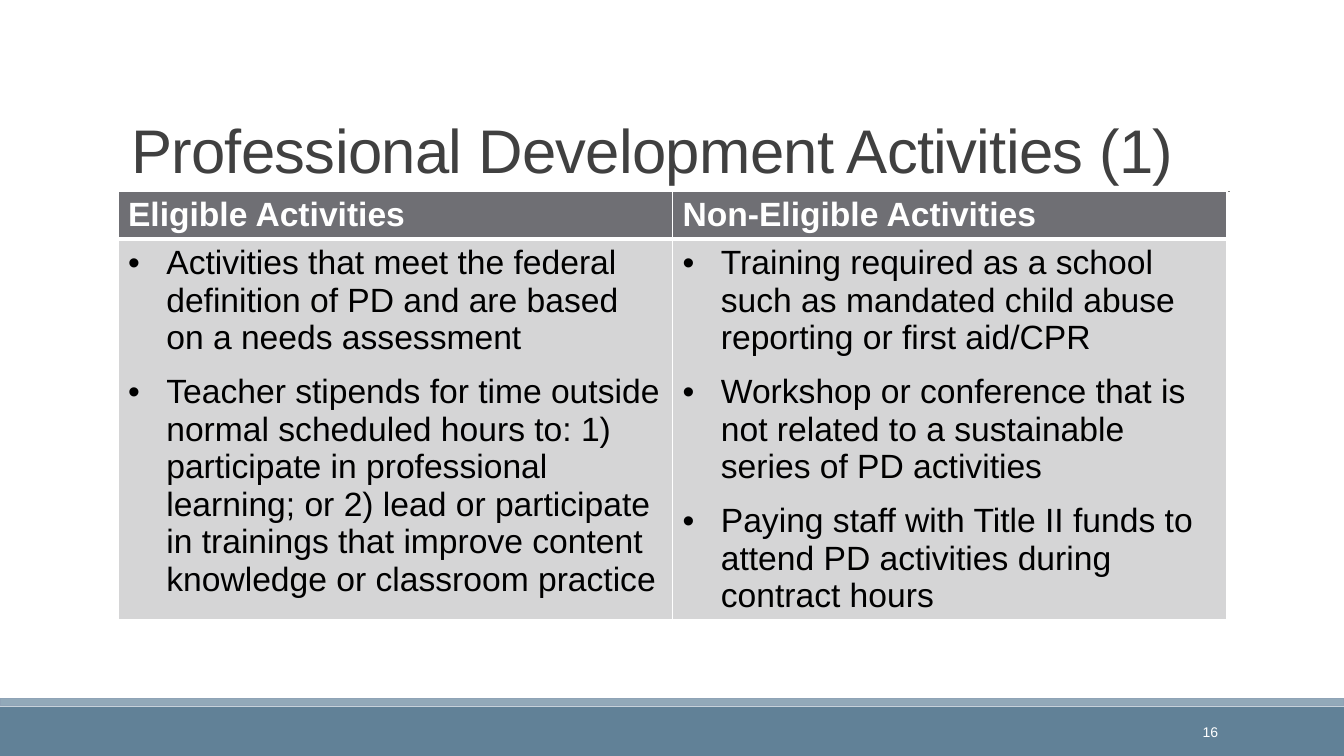
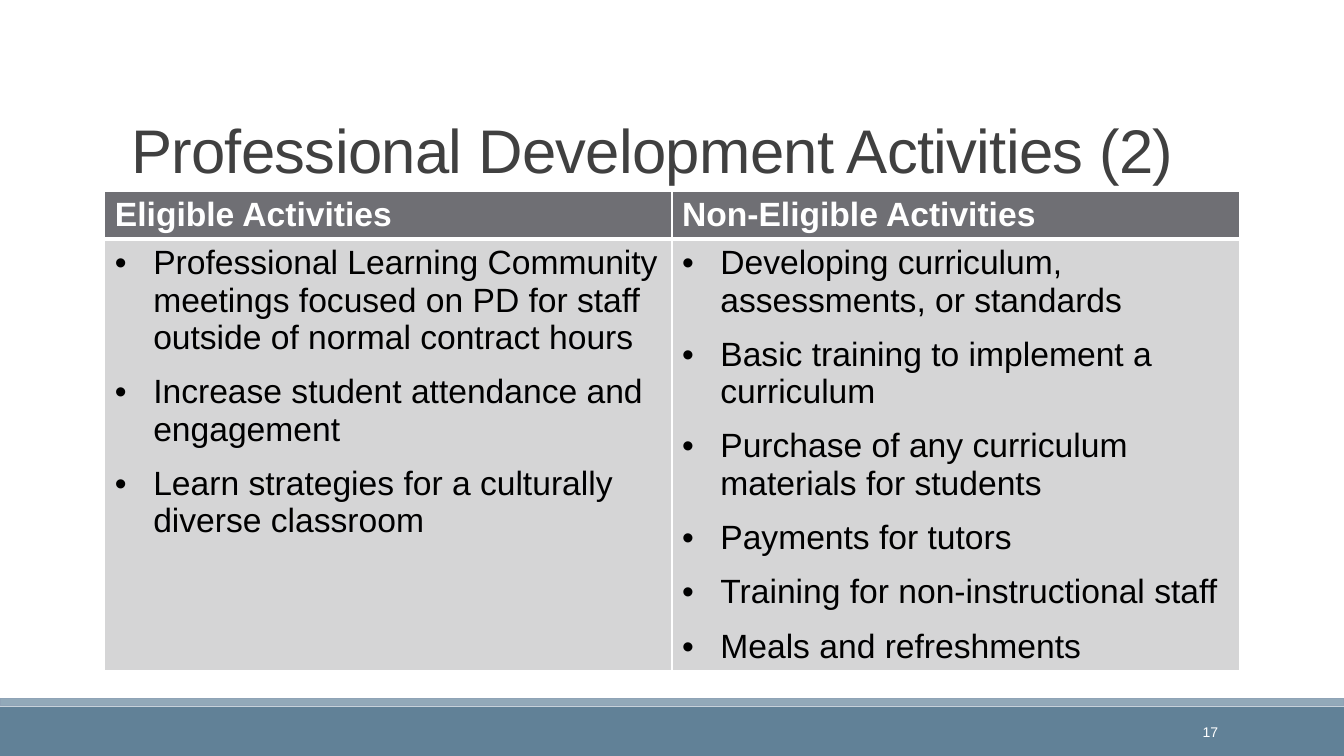
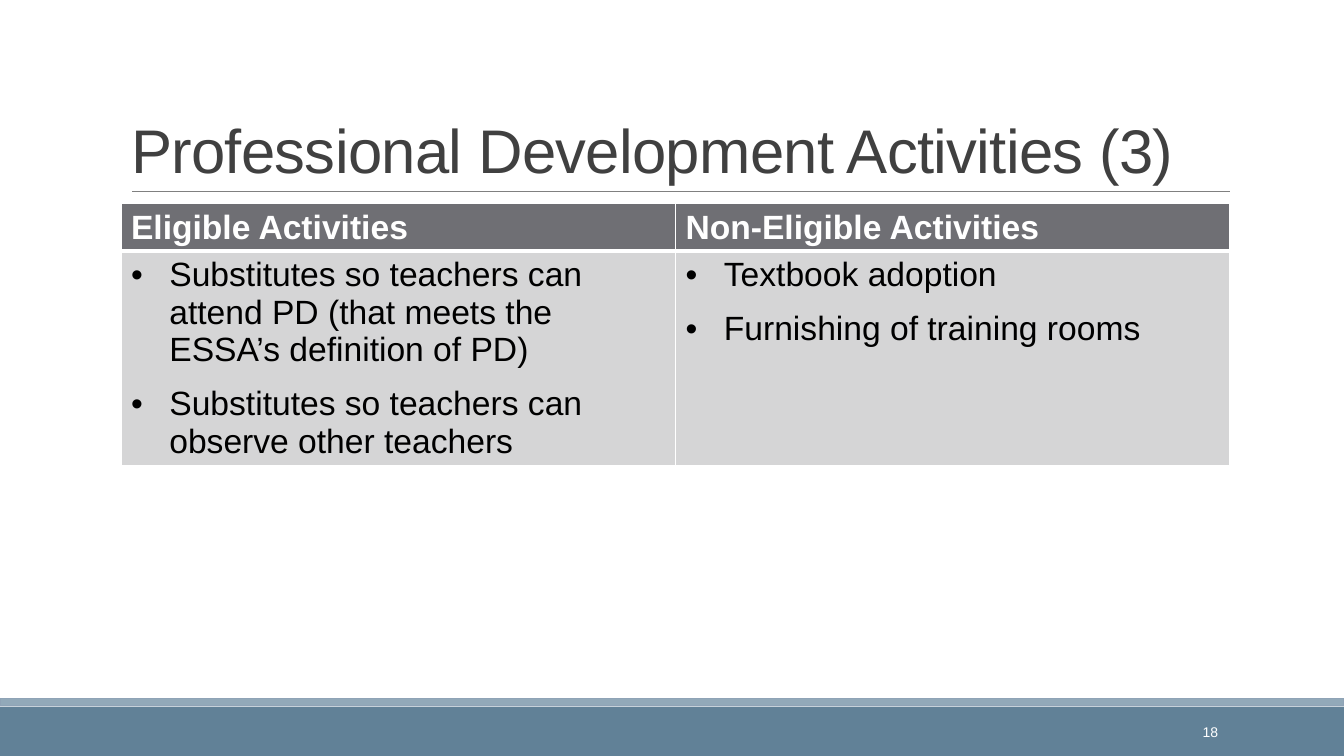
from lxml import etree
from pptx import Presentation
from pptx.dml.color import RGBColor
from pptx.enum.shapes import MSO_CONNECTOR, MSO_SHAPE
from pptx.enum.text import MSO_ANCHOR, MSO_AUTO_SIZE, PP_ALIGN
from pptx.oxml.ns import qn
from pptx.util import Inches, Pt

STRAIGHT = MSO_CONNECTOR.STRAIGHT
RECTANGLE = MSO_SHAPE.RECTANGLE
BOTTOM, MIDDLE = MSO_ANCHOR.BOTTOM, MSO_ANCHOR.MIDDLE
NO_AUTOFIT = MSO_AUTO_SIZE.NONE
LEFT, RIGHT = PP_ALIGN.LEFT, PP_ALIGN.RIGHT

WHITE = RGBColor(0xFF, 0xFF, 0xFF)
BLACK = RGBColor(0x00, 0x00, 0x00)
TITLE_GRAY = RGBColor(0x40, 0x40, 0x40)
RULE_GRAY = RGBColor(0x80, 0x80, 0x80)
HEADER_GRAY = RGBColor(0x6F, 0x6F, 0x74)
BODY_GRAY = RGBColor(0xD5, 0xD5, 0xD6)
BAND_BLUE = RGBColor(0x61, 0x81, 0x97)
STRIPE_BLUE = RGBColor(0x92, 0xA9, 0xB9)
STRIPE_EDGE = RGBColor(0x8F, 0xA3, 0xB6)

FONT = "Arial"
FIRST_NUMBER = 16
HEADINGS = ["Eligible Activities", "Non-Eligible Activities"]
ROW_HEIGHT = 0.41

# Each page: table left, top, width, height, then the bullets of both columns
PAGES = [
    (1.17, 1.9, 11, 4.53, [
        ["Activities that meet the federal definition of PD and are based on a needs assessment",
         "Teacher stipends for time outside normal scheduled hours to: 1) participate in "
         "professional learning; or 2) lead or participate in trainings that improve content "
         "knowledge or classroom practice"],
        ["Training required as a school such as mandated child abuse reporting or first aid/CPR",
         "Workshop or conference that is not related to a sustainable series of PD activities",
         "Paying staff with Title II funds to attend PD activities during contract hours"],
    ]),
    (1.04, 1.9, 11.25, 5.03, [
        ["Professional Learning Community meetings focused on PD for staff outside of normal "
         "contract hours",
         "Increase student attendance and engagement",
         "Learn strategies for a culturally diverse classroom"],
        ["Developing curriculum, assessments, or standards",
         "Basic training to implement a curriculum",
         "Purchase of any curriculum materials for students",
         "Payments for tutors",
         "Training for non-instructional staff",
         "Meals and refreshments"],
    ]),
    (1.2, 2.02, 11, 2.77, [
        ["Substitutes so teachers can attend PD (that meets the ESSA’s definition of PD)",
         "Substitutes so teachers can observe other teachers"],
        ["Textbook adoption",
         "Furnishing of training rooms"],
    ]),
]


def write(frame, lines, size=24, color=BLACK, bold=False, align=LEFT,
          bullet=False, after=0, line_spacing=None, tracking=None):
    """Fill a text frame with one paragraph per line."""
    for index, line in enumerate(lines):
        para = frame.add_paragraph() if index else frame.paragraphs[0]
        if bullet:
            properties = para._p.get_or_add_pPr()
            properties.set("marL", str(Inches(0.38)))
            properties.set("indent", str(-Inches(0.38)))
            etree.SubElement(properties, qn("a:buFont")).set("typeface", FONT)
            etree.SubElement(properties, qn("a:buChar")).set("char", "•")
        para.alignment = align
        para.space_after = Pt(after)
        if line_spacing:
            para.line_spacing = line_spacing
        span = para.add_run()
        span.text = line
        span.font.name = FONT
        span.font.size = Pt(size)
        span.font.bold = bold
        span.font.color.rgb = color
        if tracking:
            span.font._element.set("spc", str(int(tracking * 100)))


def style_cell(cell, fill, borders):
    """Give a cell white borders (side to points) and a fill."""
    properties = cell._tc.get_or_add_tcPr()
    for side, width in borders.items():
        border = etree.SubElement(properties, qn(f"a:ln{side}"), w=str(Pt(width)))
        paint = etree.SubElement(border, qn("a:solidFill"))
        etree.SubElement(paint, qn("a:srgbClr")).set("val", str(WHITE))
    cell.fill.solid()
    cell.fill.fore_color.rgb = fill


deck = Presentation()
deck.slide_width, deck.slide_height = Inches(13.33), Inches(7.5)
layout = deck.slide_layouts[5]
pages = [deck.slides.add_slide(layout) for _ in PAGES]

# Bands and title rule, drawn once and moved to the shared layout
shapes = pages[0].shapes
band = shapes.add_shape(RECTANGLE, 0, Inches(7.01), deck.slide_width, Inches(0.5))
stripe = shapes.add_shape(RECTANGLE, 0, Inches(6.93), deck.slide_width, Inches(0.07))
for shape, color in ((band, BAND_BLUE), (stripe, STRIPE_BLUE)):
    shape.shadow.inherit = False
    shape.fill.solid()
    shape.fill.fore_color.rgb = color
band.line.fill.background()
stripe.line.color.rgb = STRIPE_EDGE
stripe.line.width = Pt(1.25)
rule = shapes.add_connector(STRAIGHT, Inches(1.31), Inches(1.9), Inches(12.2), Inches(1.9))
rule.line.color.rgb = RULE_GRAY
rule.line.width = Pt(0.5)
etree.SubElement(rule._element.spPr, qn("a:effectLst"))
for shape in (band, stripe, rule):
    layout.shapes.element.append(shape.element)

for number, (page, (left, top, width, height, columns)) in enumerate(zip(pages, PAGES), 1):
    # Title
    title = page.shapes.title
    title.left, title.top = Inches(1.2), Inches(0.31)
    title.width, title.height = Inches(11), Inches(1.59)
    title.text_frame.word_wrap = True
    title.text_frame.auto_size = NO_AUTOFIT
    title.text_frame.vertical_anchor = BOTTOM
    write(title.text_frame, [f"Professional Development Activities ({number})"],
          size=44, color=TITLE_GRAY, line_spacing=0.85, tracking=-0.5)

    # Table of activities; the rows grow with their text
    holder = page.shapes.add_table(2, 2, Inches(left), Inches(top), Inches(width), Inches(height))
    table = holder.table
    for row in table.rows:
        row.height = Inches(ROW_HEIGHT)
    holder.height = Inches(height)
    for column, (heading, bullets) in enumerate(zip(HEADINGS, columns)):
        header, body = table.cell(0, column), table.cell(1, column)
        style_cell(header, HEADER_GRAY, {"L": 1, "R": 1, "T": 1, "B": 3})
        style_cell(body, BODY_GRAY, {"L": 1, "R": 1, "T": 3, "B": 1})
        write(header.text_frame, [heading], color=WHITE, bold=True)
        write(body.text_frame, bullets, bullet=True, after=12)

    # Page number
    box = page.shapes.add_textbox(Inches(10.74), Inches(7.06), Inches(1.44), Inches(0.4))
    box.text_frame.word_wrap = True
    box.text_frame.vertical_anchor = MIDDLE
    write(box.text_frame, [str(FIRST_NUMBER + number - 1)], size=10, color=WHITE, align=RIGHT)

deck.save("out.pptx")
